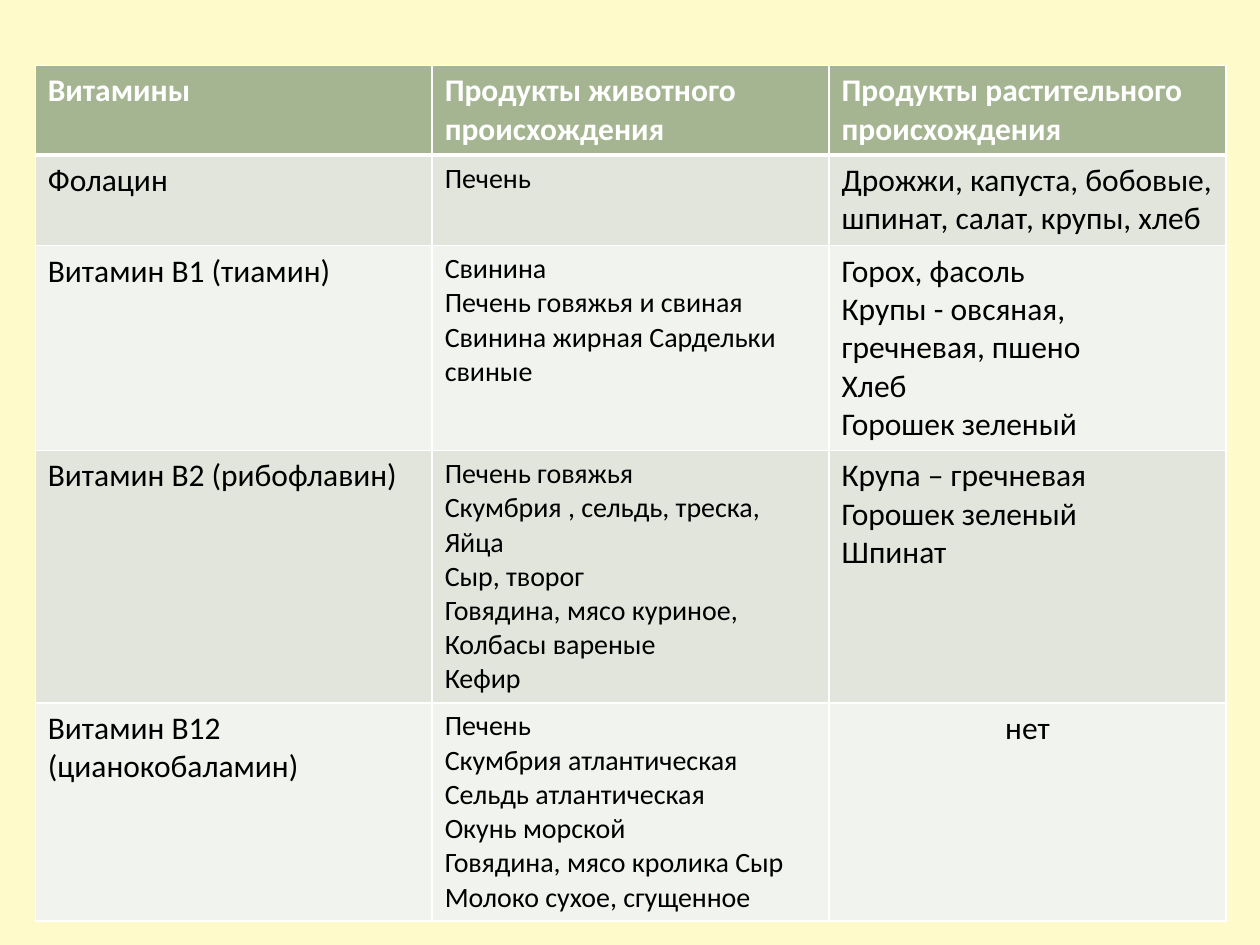
from lxml import etree
from pptx import Presentation, util as u
from pptx.dml.color import RGBColor
from pptx.enum import text
from pptx.oxml import ns

CREAM = RGBColor(0xFE, 0xFA, 0xC9)
GREEN = RGBColor(0xA5, 0xB5, 0x92)
BANDS = [RGBColor(0xF0, 0xF3, 0xEE), RGBColor(0xE1, 0xE5, 0xDC)]
WHITE = RGBColor(0xFF, 0xFF, 0xFF)
BLACK = RGBColor(0x00, 0x00, 0x00)

COLUMN_WIDTH = 3.15
ROW_HEIGHTS = [0.7, 0.72, 1.62, 2.0, 1.73]
COLUMN_SIZES = [18, 16, 18]

# Each line of a cell is one paragraph.
ROWS = [
    ["Витамины", "Продукты животного происхождения",
     "Продукты растительного происхождения"],
    ["Фолацин", "Печень",
     "Дрожжи, капуста, бобовые, шпинат, салат, крупы, хлеб"],
    ["Витамин B1 (тиамин)",
     "Свинина\nПечень говяжья и свиная\nСвинина жирная Сардельки свиные",
     "Горох, фасоль\nКрупы - овсяная, гречневая, пшено\nХлеб\nГорошек зеленый"],
    ["Витамин В2 (рибофлавин)",
     "Печень говяжья\nСкумбрия , сельдь, треска,\nЯйца\nСыр, творог\n"
     "Говядина, мясо куриное, Колбасы вареные\nКефир",
     "Крупа – гречневая\nГорошек зеленый\nШпинат"],
    ["Витамин В12 (цианокобаламин)",
     "Печень\nСкумбрия атлантическая\nСельдь атлантическая\nОкунь морской\n"
     "Говядина, мясо кролика Сыр\nМолоко сухое, сгущенное",
     "нет"],
]


def add_borders(cell, widths):
    """Draw white cell borders; widths maps a side (L, R, T, B) to points."""
    properties = cell._tc.get_or_add_tcPr()
    for position, (side, width) in enumerate(widths.items()):
        line = etree.Element(ns.qn(f"a:ln{side}"), w=str(u.Pt(width)))
        fill = etree.SubElement(line, ns.qn("a:solidFill"))
        etree.SubElement(fill, ns.qn("a:srgbClr"), val=str(WHITE))
        properties.insert(position, line)


deck = Presentation()
deck.slide_width, deck.slide_height = u.Inches(10), u.Inches(7.5)
page = deck.slides.add_slide(deck.slide_layouts[6])
page.background.fill.solid()
page.background.fill.fore_color.rgb = CREAM

table = page.shapes.add_table(
    len(ROWS), len(COLUMN_SIZES), u.Inches(0.28), u.Inches(0.52),
    u.Inches(COLUMN_WIDTH * len(COLUMN_SIZES)), u.Inches(sum(ROW_HEIGHTS))).table
for column in table.columns:
    column.width = u.Inches(COLUMN_WIDTH)

for row_index, (row, height) in enumerate(zip(ROWS, ROW_HEIGHTS)):
    table.rows[row_index].height = u.Inches(height)
    header = row_index == 0
    for column_index, content in enumerate(row):
        cell = table.cell(row_index, column_index)
        cell.text = content
        cell.fill.solid()
        cell.fill.fore_color.rgb = GREEN if header else BANDS[row_index % 2]
        add_borders(cell, {"L": 1, "R": 1, "T": 3 if row_index == 1 else 1,
                           "B": 3 if header else 1})
        size = 18 if header else COLUMN_SIZES[column_index]
        font_format = {"name": "Calibri", "size": u.Pt(size), "bold": header}
        for para in cell.text_frame.paragraphs:
            for span in para.runs:
                for attribute, value in font_format.items():
                    setattr(span.font, attribute, value)
                span.font.color.rgb = WHITE if header else BLACK

last_cell = table.cell(len(ROWS) - 1, len(COLUMN_SIZES) - 1)
last_cell.text_frame.paragraphs[0].alignment = text.PP_ALIGN.CENTER

deck.save("out.pptx")
